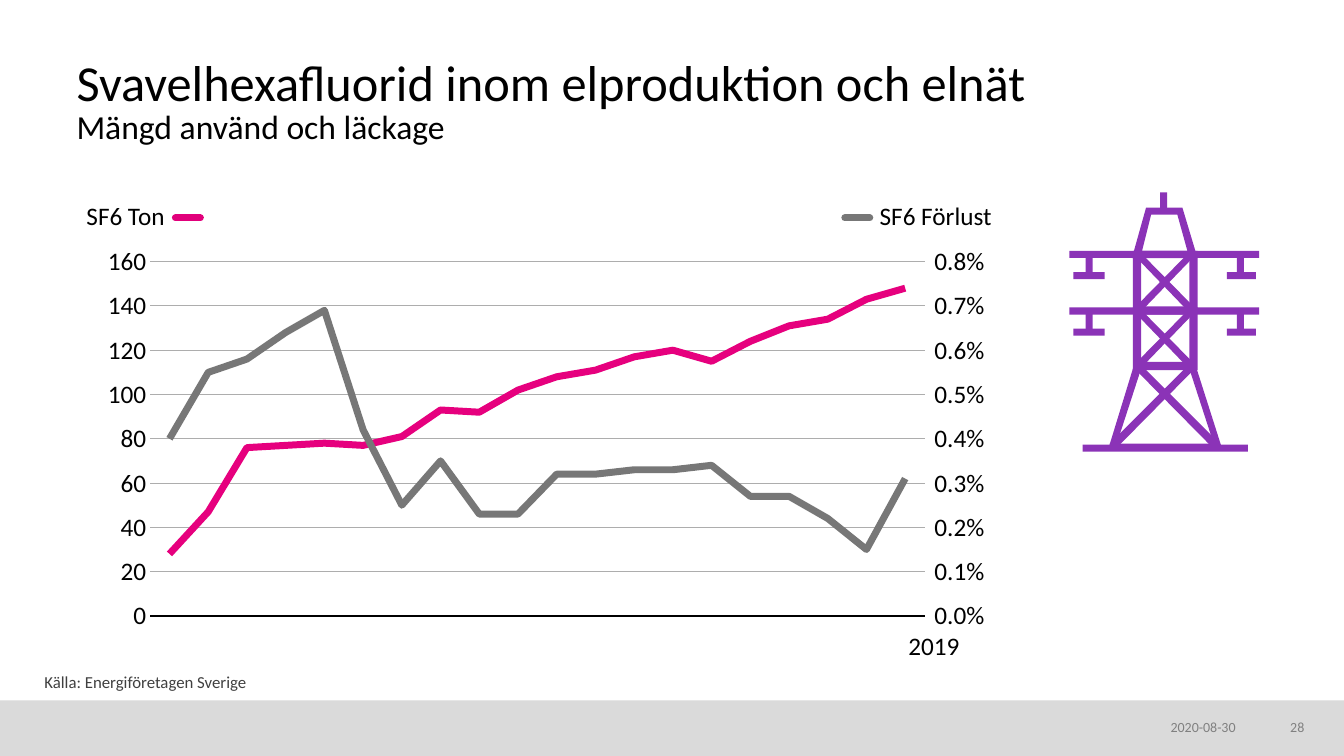
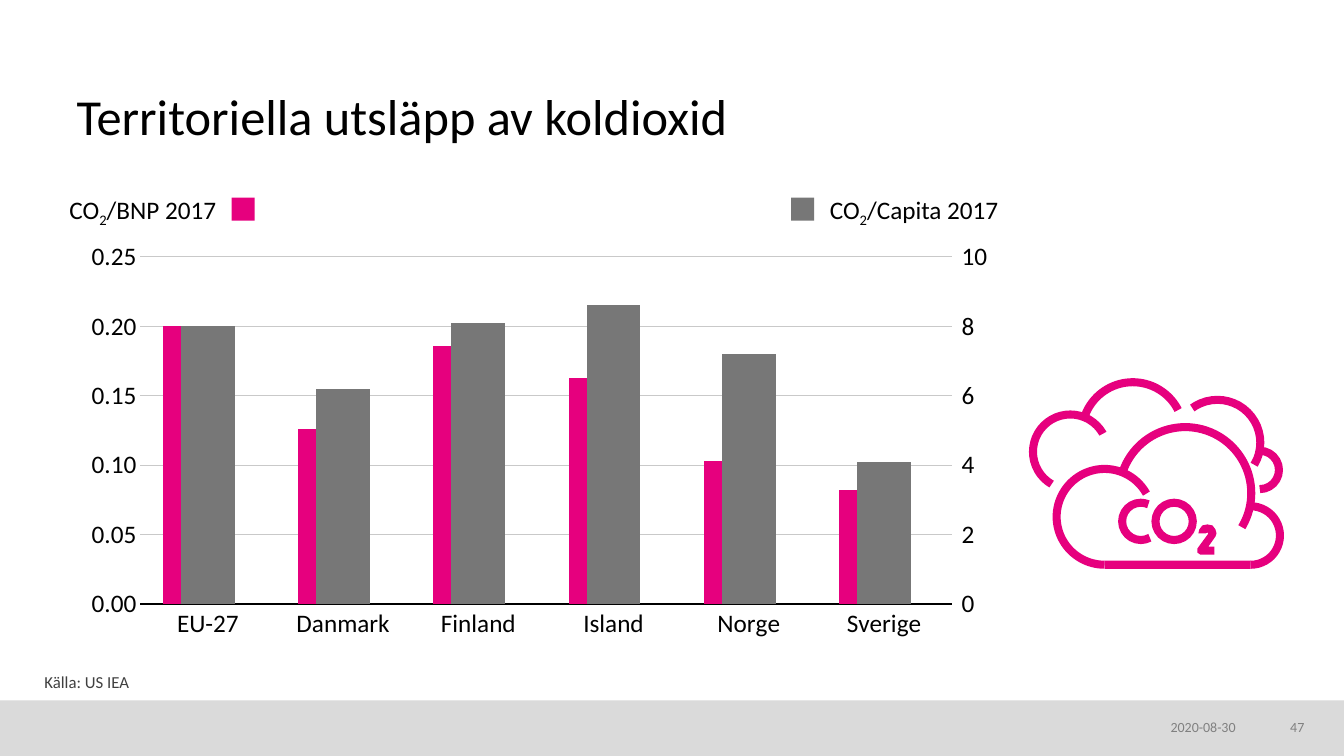
from copy import deepcopy
from dataclasses import dataclass

from lxml import etree
from pptx import Presentation
from pptx.chart.axis import CategoryAxis, ValueAxis
from pptx.chart.data import CategoryChartData
from pptx.dml.color import RGBColor
from pptx.enum.chart import XL_CHART_TYPE, XL_TICK_LABEL_POSITION, XL_TICK_MARK
from pptx.enum.shapes import MSO_CONNECTOR, MSO_SHAPE
from pptx.enum.text import MSO_ANCHOR, PP_ALIGN
from pptx.oxml.ns import qn
from pptx.util import Cm, Pt

RECT, OVAL, ARC = MSO_SHAPE.RECTANGLE, MSO_SHAPE.OVAL, MSO_SHAPE.ARC
STRAIGHT = MSO_CONNECTOR.STRAIGHT
LEFT, CENTER, RIGHT = PP_ALIGN.LEFT, PP_ALIGN.CENTER, PP_ALIGN.RIGHT
TOP, MIDDLE, BOTTOM = MSO_ANCHOR.TOP, MSO_ANCHOR.MIDDLE, MSO_ANCHOR.BOTTOM
LINE, COLUMN = XL_CHART_TYPE.LINE, XL_CHART_TYPE.COLUMN_CLUSTERED
TICK_NONE, TICK_OUT = XL_TICK_MARK.NONE, XL_TICK_MARK.OUTSIDE
LABELS_NONE = XL_TICK_LABEL_POSITION.NONE


@dataclass(frozen=True)
class Theme:
    font: str = "Calibri"
    black: str = "000000"
    pink: str = "E6007E"
    key_pink: str = "E1007B"
    gray: str = "777777"
    purple: str = "8B33B7"
    band: str = "DADADA"
    source: str = "404040"
    footer: str = "808080"
    title_pt: int = 36
    subtitle_pt: int = 24
    label_pt: int = 18
    source_pt: int = 12
    footer_pt: int = 10
    series_pt: int = 5


T = Theme()
WIDTH, HEIGHT = 33.87, 19.05
CHART_BOX = (1.12, 4.25, 30.98, 12.47)


def rgb(color):
    return RGBColor.from_string(color)


def paint(shape, color):
    shape.shadow.inherit = False
    shape.fill.solid()
    shape.fill.fore_color.rgb = rgb(color)
    shape.line.fill.background()
    return shape


def rect(s, box, color):
    return paint(s.shapes.add_shape(RECT, *map(Cm, box)), color)


def text(s, box, parts, size=T.label_pt, color=T.black, align=LEFT,
         anchor=TOP, spacing=0.9, inset=True):
    tf = s.shapes.add_textbox(*map(Cm, box)).text_frame
    tf.word_wrap = True
    tf.vertical_anchor = anchor
    if not inset:
        for side in ("left", "right", "top", "bottom"):
            setattr(tf, f"margin_{side}", 0)
    p = tf.paragraphs[0]
    p.alignment, p.line_spacing = align, spacing
    for part in parts:
        if part.get("new_line"):
            p.add_line_break()
        r = p.add_run()
        r.text = part["text"]
        formats = {"name": T.font, "size": Pt(part.get("size", size))}
        for name, value in formats.items():
            setattr(r.font, name, value)
        r.font.color.rgb = rgb(color)
        if part.get("sub"):
            r._r.get_or_add_rPr().set("baseline", "-25000")


def base_slide(prs, title, source, number):
    s = prs.slides.add_slide(prs.slide_layouts[6])
    rect(s, (0, 17.65, WIDTH, HEIGHT - 17.65), T.band)
    text(s, (1.93, 0.96, 30.15, 2.72), title, T.title_pt,
         anchor=BOTTOM, spacing=0.85, inset=False)
    text(s, (1.12, 16.92, 12.34, 0.58), [{"text": source}], T.source_pt,
         T.source, anchor=MIDDLE, inset=False)
    for box, value, align in (((29.5, 18.11, 1.88, 0.5), "2020-08-30", LEFT),
                              ((31.87, 18.11, 1, 0.5), number, RIGHT)):
        text(s, box, [{"text": value}], T.footer_pt, T.footer, align,
             spacing=1, inset=False)
    return s


def set_layout(plot_area, fractions):
    for old in plot_area.findall(qn("c:layout")):
        plot_area.remove(old)
    layout = etree.Element(qn("c:layout"))
    manual = etree.SubElement(layout, qn("c:manualLayout"))
    values = [("layoutTarget", "inner"), ("xMode", "edge"), ("yMode", "edge")]
    values += zip("xywh", map(str, fractions))
    for tag, value in values:
        etree.SubElement(manual, qn(f"c:{tag}")).set("val", value)
    plot_area.insert(0, layout)


def move_last_series_right(chart):
    plot = chart._chartSpace.xpath("c:chart/c:plotArea/*[c:ser]")[0]
    right_plot = deepcopy(plot)
    plot.remove(plot.findall(qn("c:ser"))[-1])
    for ser in right_plot.findall(qn("c:ser"))[:-1]:
        right_plot.remove(ser)
    plot.addnext(right_plot)
    axes = [chart.category_axis._element, chart.value_axis._element]
    copies = [deepcopy(axis) for axis in axes]
    ids = ("50010", "50020")
    for ref, axis_id in zip(right_plot.findall(qn("c:axId")), ids):
        ref.set("val", axis_id)
    for axis, own, other, crosses in zip(copies, ids, reversed(ids), ("autoZero", "max")):
        axis.find(qn("c:axId")).set("val", own)
        cross_axis = axis.find(qn("c:crossAx"))
        cross_axis.set("val", other)
        for old in axis.findall(qn("c:crosses")):
            axis.remove(old)
        crossing = etree.Element(qn("c:crosses"))
        crossing.set("val", crosses)
        cross_axis.addnext(crossing)
        axes[-1].addnext(axis)
    category, value = copies
    value.find(qn("c:axPos")).set("val", "r")
    CategoryAxis(category).visible = False
    return ValueAxis(value)


def scale_axis(axis, maximum, unit, number_format, tick):
    formats = {"minimum_scale": 0, "maximum_scale": maximum, "major_unit": unit,
               "major_tick_mark": tick, "minor_tick_mark": TICK_NONE}
    for name, value in formats.items():
        setattr(axis, name, value)
    axis.tick_labels.number_format = number_format
    axis.tick_labels.number_format_is_linked = False
    axis.format.line.fill.background()


def dual_chart(s, box, kind, categories, series, plot, left, right, grid):
    data = CategoryChartData()
    data.categories = categories
    for i, (values, _) in enumerate(series, 1):
        data.add_series(f"Series {i}", values)
    chart = s.shapes.add_chart(kind, *map(Cm, box), data).chart
    chart.has_title = chart.has_legend = False
    chart.font.name, chart.font.size = T.font, Pt(T.footer_pt)
    chart.font.color.rgb = rgb(T.black)
    group = chart.plots[0]
    group.vary_by_categories = False
    if kind == COLUMN:
        group.gap_width, group.overlap = 151, -100
    for ser, (_, color) in zip(group.series, series):
        if kind == LINE:
            ser.smooth = False
            ser.format.line.width = Pt(T.series_pt)
            ser.format.line.color.rgb = rgb(color)
        else:
            ser.format.fill.solid()
            ser.format.fill.fore_color.rgb = rgb(color)
    cat, val = chart.category_axis, chart.value_axis
    cat.major_tick_mark = TICK_NONE
    cat.format.line.color.rgb = rgb(T.black)
    cat.format.line.width = Pt(1.5)
    for axis in (cat, val):
        axis.tick_labels.font.size = Pt(T.label_pt)
        axis.tick_labels.font.color.rgb = rgb(T.black)
    val.has_major_gridlines = True
    val.major_gridlines.format.line.color.rgb = rgb(grid)
    val.major_gridlines.format.line.width = Pt(0.75)
    scale_axis(val, *left, TICK_NONE)
    right_axis = move_last_series_right(chart)
    right_axis.has_major_gridlines = False
    scale_axis(right_axis, *right, TICK_OUT)
    set_layout(chart._chartSpace.xpath("c:chart/c:plotArea")[0], plot)
    return chart


def line_key(s, x, y, color):
    line = s.shapes.add_connector(STRAIGHT, Cm(x), Cm(y), Cm(x + 0.63), Cm(y))
    line.line.color.rgb = rgb(color)
    line.line.width = Pt(T.series_pt)
    line.line._get_or_add_ln().set("cap", "rnd")
    etree.SubElement(line._element.spPr, qn("a:effectLst"))


class Icon:
    def __init__(self, s, x, y, width, units, color):
        self.shapes = s.shapes.add_group_shape().shapes
        self.x, self.y = Cm(x), Cm(y)
        self.unit = Cm(width) / units
        self.color = color

    def place(self, x, y, w, h):
        u = self.unit
        return int(self.x + x * u), int(self.y + y * u), int(w * u), int(h * u)

    def bar(self, *box):
        paint(self.shapes.add_shape(RECT, *self.place(*box)), self.color)

    def polygon(self, *outlines):
        builder = self.shapes.build_freeform(*outlines[0][0], self.unit)
        for i, points in enumerate(outlines):
            if i:
                builder.move_to(*points[0])
            builder.add_line_segments(points[1:], close=True)
        paint(builder.convert_to_shape(self.x, self.y), self.color)

    def stroke(self, kind, cx, cy, radius, angles=()):
        box = self.place(cx - radius, cy - radius, 2 * radius, 2 * radius)
        shape = self.shapes.add_shape(kind, *box)
        shape.shadow.inherit = False
        shape.fill.background()
        shape.line.color.rgb = rgb(self.color)
        shape.line.width = int(8 * self.unit)
        for i, angle in enumerate(angles):
            shape.adjustments[i] = angle * 0.6


def corners(x1, y1, x2, y2):
    return [(x1, y1), (x2, y1), (x2, y2), (x1, y2)]


def pylon(s, x, y, width):
    icon = Icon(s, x, y, width, 188, T.purple)

    def crossed(points):
        icon.polygon(points)
        icon.polygon([(189 - px, py) for px, py in points])

    icon.polygon([(127, 65), (62, 65), (76, 15), (112, 15)],
                 [(117, 58), (72, 58), (81, 22), (107, 22)])
    icon.polygon([(152, 256), (38, 256), (65, 168), (124, 168)],
                 [(143, 249), (47, 249), (71, 175), (119, 175)])
    crossed([(45, 255), (40, 249), (119, 170), (124, 175)])
    for top in (58, 114):
        icon.polygon(corners(63, top, 127, top + 62),
                     corners(71, top + 7, 119, top + 55))
        crossed([(119, top + 61), (65, top + 5), (69, top), (124, top + 56)])
        icon.bar(0, top, 188, 7)
        for hanger, foot, foot_width in ((16, 4, 31), (166, 156, 29)):
            icon.bar(hanger, top + 3, 7, 22)
            icon.bar(foot, top + 21, foot_width, 7)
    icon.bar(13, 250, 164, 7)
    icon.bar(90, 0, 7, 18)


def cloud(s, x, y, width):
    icon = Icon(s, x, y, width, 253, T.pink)
    for cx, cy, radius, start, end in (
            (111, 142, 18.5, 61, 294), (75, 137.5, 47.5, 90, 331),
            (155, 114, 65.5, 199, 31), (220, 156, 29, 270, 90),
            (187, 64, 42.5, 234, 31), (229, 91, 19, 270, 90),
            (41, 73, 37, 120, 331), (103, 54.5, 50.5, 198, 333)):
        icon.stroke(ARC, cx, cy, radius, (start, end))
    icon.stroke(OVAL, 144, 142, 18.5)
    icon.bar(75, 181, 145, 8)
    icon.polygon([(184, 175), (170, 175), (167, 173), (167, 169), (178, 154),
                  (177, 153), (175, 154), (168, 154), (169, 150), (172, 146),
                  (177, 145), (182, 146), (185, 150), (186, 154), (185, 157),
                  (178, 167), (184, 167)])


def gas_slide(prs):
    title = [{"text": "Svavelhexafluorid inom elproduktion och elnät"},
             {"text": "Mängd använd och läckage", "size": T.subtitle_pt, "new_line": True}]
    s = base_slide(prs, title, "Källa: Energiföretagen Sverige", "28")
    tonnes = (28, 47, 76, 77, 78, 77, 81, 93, 92, 102, 108, 111, 117, 120, 115,
              124, 131, 134, 143, 148)
    loss = (0.004, 0.0055, 0.0058, 0.0064, 0.0069, 0.0042, 0.0025, 0.0035,
            0.0023, 0.0023, 0.0032, 0.0032, 0.0033, 0.0033, 0.0034, 0.0027,
            0.0027, 0.0022, 0.0015, 0.0031)
    chart = dual_chart(s, CHART_BOX, LINE, [str(year) for year in range(2000, 2020)],
                       [(tonnes, T.pink), (loss, T.gray)], (0.086, 0.188, 0.63, 0.716),
                       (160, 20, "#,##0"), (0.008, 0.001, "0.0%"), "ADADAD")
    chart.category_axis.tick_label_position = LABELS_NONE
    text(s, (1.93, 5, 3.02, 0.94), [{"text": "SF6 Ton"}])
    text(s, (21.92, 5, 3.89, 0.94), [{"text": "SF6 Förlust"}])
    line_key(s, 4.42, 5.49, T.key_pink)
    line_key(s, 21.29, 5.49, T.gray)
    text(s, (22.58, 14.8, 1.91, 3.02), [{"text": "2019"}], align=CENTER, anchor=MIDDLE)
    pylon(s, 26.95, 4.85, 4.78)


def emission_slide(prs):
    s = base_slide(prs, [{"text": "Territoriella utsläpp av koldioxid"}], "Källa: US IEA", "47")
    countries = ("EU-27", "Danmark", "Finland", "Island", "Norge", "Sverige")
    series = [((0.2, 0.126, 0.186, 0.163, 0.103, 0.082), T.pink),
              ((None,) * len(countries), T.gray),
              ((8, 6.2, 8.1, 8.6, 7.2, 4.1), T.gray)]
    dual_chart(s, CHART_BOX, COLUMN, countries, series, (0.078, 0.178, 0.66, 0.702),
               (0.25, 0.05, "#,##0.00"), (10, 2, "#,##0"), "C9C9C9")
    for x, key_x, unit, align, color in ((1.5, 5.84, "/BNP 2017", LEFT, T.pink),
                                         (19.69, 19.94, "/Capita 2017", RIGHT, T.gray)):
        parts = [{"text": "CO"}, {"text": "2", "sub": True}, {"text": unit}]
        text(s, (x, 4.78, 5.72, 0.94), parts, align=align)
        rect(s, (key_x, 4.98, 0.58, 0.58), color)
    cloud(s, 25.93, 9.53, 6.43)


def main():
    prs = Presentation()
    prs.slide_width, prs.slide_height = Cm(WIDTH), Cm(HEIGHT)
    gas_slide(prs)
    emission_slide(prs)
    prs.save("out.pptx")


if __name__ == "__main__":
    main()
